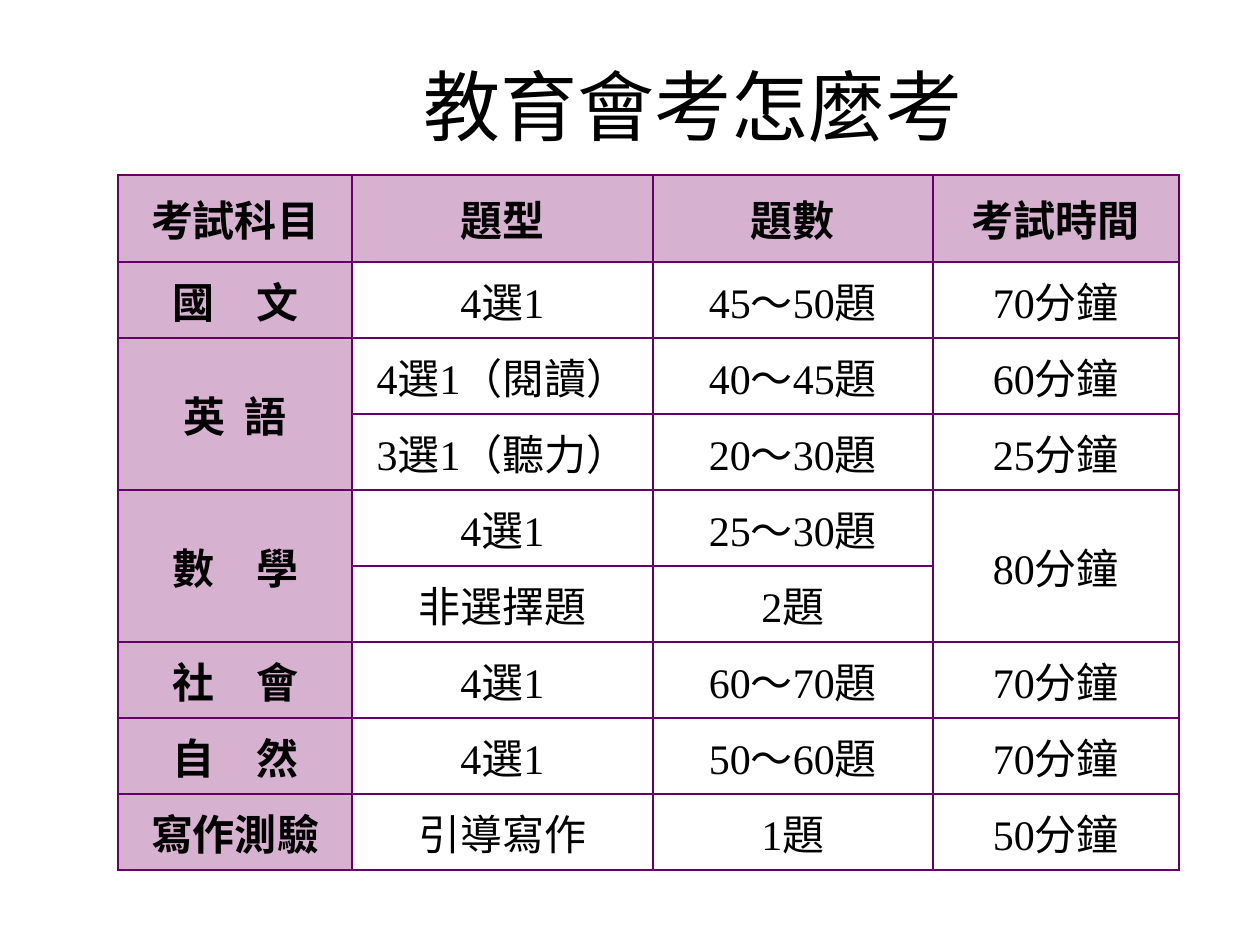
from lxml.etree import SubElement
from pptx import Presentation
from pptx.dml.color import RGBColor
from pptx.enum.text import MSO_ANCHOR as Anchor, PP_ALIGN as Align
from pptx.oxml.ns import qn
from pptx.util import Pt

PX = 914400 / 126
BLACK = RGBColor(0x00, 0x00, 0x00)
PURPLE = RGBColor(0x66, 0x00, 0x66)
PINK = RGBColor(0xD7, 0xB1, 0xD0)
SANS = "Noto Sans CJK SC"
SERIF = "Times New Roman"

COLS = [234, 301, 280, 246]
HEAD, ROW, PAD = 87, 76, 3
# None marks a cell merged into the one above it
EXAMS = [
    ["考試科目", "題型", "題數", "考試時間"],
    ["國　文", "4選1", "45～50題", "70分鐘"],
    ["英  語", "4選1（閱讀）", "40～45題", "60分鐘"],
    [None, "3選1（聽力）", "20～30題", "25分鐘"],
    ["數　學", "4選1", "25～30題", "80分鐘"],
    [None, "非選擇題", "2題", None],
    ["社　會", "4選1", "60～70題", "70分鐘"],
    ["自　然", "4選1", "50～60題", "70分鐘"],
    ["寫作測驗", "引導寫作", "1題", "50分鐘"],
]


def px(n):
    return round(n * PX)


def write(frame, text, size, face, bold=False):
    frame.text = text
    para = frame.paragraphs[0]
    para.alignment = Align.CENTER
    for run in para.runs:
        font = run.font
        font.size, font.bold, font.name = Pt(size), bold, face
        font.color.rgb = BLACK
        SubElement(font._element, qn("a:ea"), typeface=SANS)


def add_title(slide, x, y, w, h):
    title = slide.shapes.title
    title.left, title.top, title.width, title.height = map(px, (x, y, w, h))
    title.text_frame.vertical_anchor = Anchor.MIDDLE
    write(title.text_frame, "教育會考怎麼考", 44, SANS)


def add_edges(cell):
    props = cell._tc.get_or_add_tcPr()
    for side in ("lnL", "lnR", "lnT", "lnB"):
        line = SubElement(props, qn(f"a:{side}"), w=str(Pt(1)))
        fill = SubElement(line, qn("a:solidFill"))
        SubElement(fill, qn("a:srgbClr"), val=str(PURPLE))


def style_cell(cell, label):
    """Set edges first, as the fill must follow them in the XML."""
    add_edges(cell)
    if label:
        cell.fill.solid()
        cell.fill.fore_color.rgb = PINK
    else:
        cell.fill.background()
    cell.vertical_anchor = Anchor.MIDDLE
    cell.margin_left = cell.margin_right = px(PAD)
    cell.margin_top = cell.margin_bottom = px(PAD)


def add_exams(slide, x, y):
    rows = [HEAD] + [ROW] * (len(EXAMS) - 1)
    box = map(px, (x, y, sum(COLS), sum(rows)))
    table = slide.shapes.add_table(len(rows), len(COLS), *box).table
    for col, width in zip(table.columns, COLS):
        col.width = px(width)
    for row, height in zip(table.rows, rows):
        row.height = px(height)
    for r, texts in enumerate(EXAMS):
        for c, text in enumerate(texts):
            cell = table.cell(r, c)
            label = r == 0 or c == 0
            style_cell(cell, label)
            if text is None:
                table.cell(r - 1, c).merge(cell)
            else:
                write(cell.text_frame, text, 24, SANS if label else SERIF, label)


def main():
    deck = Presentation()
    deck.slide_width, deck.slide_height = px(1260), px(945)
    slide = deck.slides.add_slide(deck.slide_layouts[5])
    add_title(slide, 126, 26, 1134, 158)
    add_exams(slide, 118, 175)
    deck.save("out.pptx")


if __name__ == "__main__":
    main()
